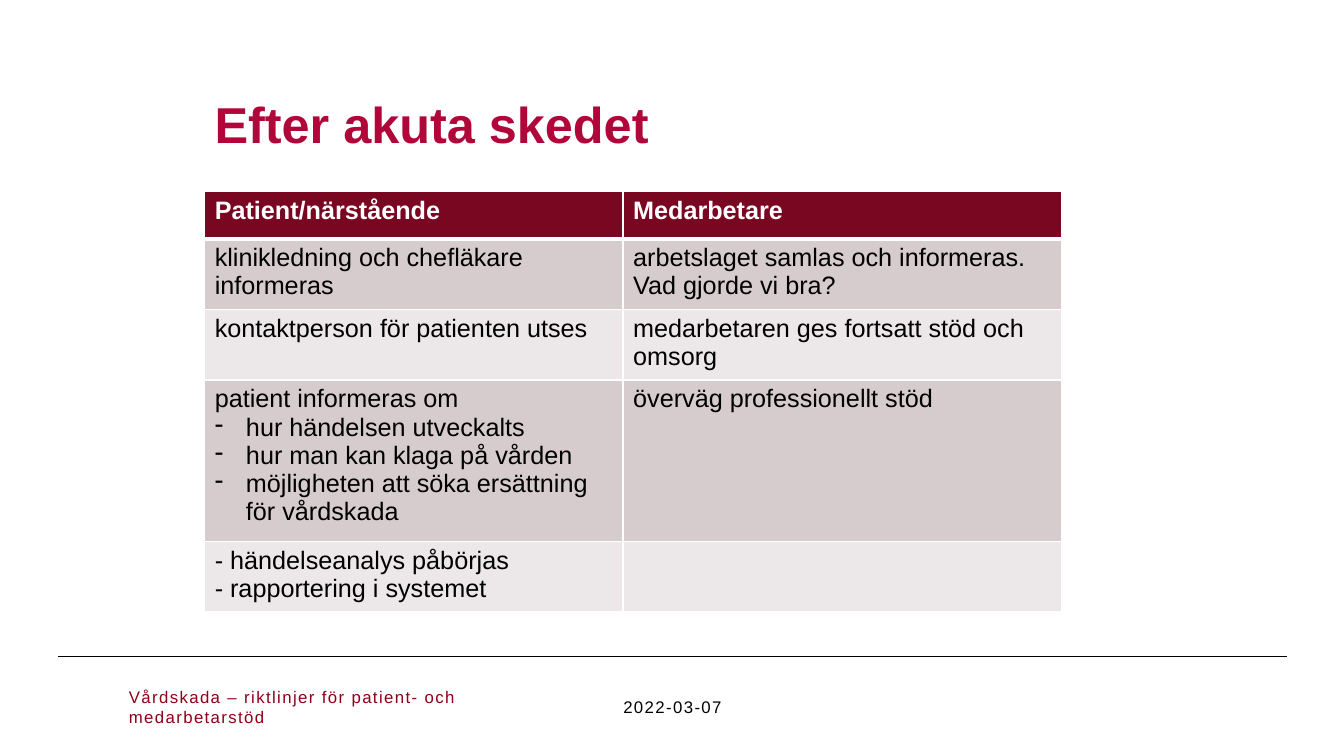
"""Build the slide about what happens after the acute phase."""
import pptx
import pptx.dml.color
import pptx.enum.shapes
import pptx.enum.text
import pptx.oxml
import pptx.oxml.ns
import pptx.util

PX = 9144
ANCHOR = pptx.enum.text.MSO_ANCHOR
ALIGN = pptx.enum.text.PP_ALIGN
NS = pptx.oxml.ns.nsdecls("a")


def rgb(value):
    return pptx.dml.color.RGBColor.from_string(value)


def write(frame, text, size=18, color="000000", bold=False, spacing=0,
          align=ALIGN.LEFT, anchor=ANCHOR.TOP):
    frame.word_wrap = True
    frame.vertical_anchor = anchor
    for index, line in enumerate(text.split("\n")):
        paragraph = frame.add_paragraph() if index else frame.paragraphs[0]
        paragraph.alignment = align
        if line.startswith("•"):
            line = line[1:]
            properties = paragraph._p.get_or_add_pPr()
            properties.set("marL", str(31 * PX))
            properties.set("indent", str(-31 * PX))
            properties.append(pptx.oxml.parse_xml(f'<a:buChar {NS} char="-"/>'))
        run = paragraph.add_run()
        run.text = line
        run.font.name = "Arial"
        run.font.size = pptx.util.Pt(size)
        run.font.bold = bold
        run.font.color.rgb = rgb(color)
        if spacing:
            run._r.get_or_add_rPr().set("spc", str(spacing * 100))


presentation = pptx.Presentation()
presentation.slide_width = 1333 * PX
presentation.slide_height = 750 * PX
slide = presentation.slides.add_slide(presentation.slide_layouts[6])

footer_rule = slide.shapes.add_connector(
    pptx.enum.shapes.MSO_CONNECTOR.STRAIGHT, 58 * PX, 651 * PX, 1276 * PX, 651 * PX)
footer_rule.line.color.rgb = rgb("000000")
footer_rule.line.width = pptx.util.Pt(0.5)
footer_rule._element.spPr.append(pptx.oxml.parse_xml(f"<a:effectLst {NS}/>"))

footer = dict(size=12, spacing=1, anchor=ANCHOR.MIDDLE)
for box, text, style in [
    ((203, 86, 795, 71), "Efter akuta skedet",
     dict(size=36, color="B1063A", bold=True, anchor=ANCHOR.BOTTOM)),
    ((531, 681, 272, 40), "2022-03-07", dict(footer, align=ALIGN.CENTER)),
    ((118, 681, 394, 40), "Vårdskada – riktlinjer för patient- och medarbetarstöd",
     dict(footer, color="8D0017")),
]:
    label = slide.shapes.add_textbox(*(length * PX for length in box))
    write(label.text_frame, text, **style)

steps = [
    ("Patient/närstående", "Medarbetare"),
    ("klinikledning och chefläkare informeras",
     "arbetslaget samlas och informeras. Vad gjorde vi bra?"),
    ("kontaktperson för patienten utses", "medarbetaren ges fortsatt stöd och omsorg"),
    ("patient informeras om\n•hur händelsen utveckalts\n•hur man kan klaga på vården\n"
     "•möjligheten att söka ersättning för vårdskada", "överväg professionellt stöd"),
    ("- händelseanalys påbörjas\n- rapportering i systemet", ""),
]
row_heights = [47, 66, 66, 150, 66]
column_widths = [415, 435]
table = slide.shapes.add_table(
    len(steps), 2, 203 * PX, 190 * PX, sum(column_widths) * PX, sum(row_heights) * PX).table
for column, width in zip(table.columns, column_widths):
    column.width = width * PX

for row_index, (row, height) in enumerate(zip(table.rows, row_heights)):
    row.height = height * PX
    header = row_index == 0
    fill = "790721" if header else ("ECE7E8", "D7CCCD")[row_index % 2]
    for cell, text in zip(row.cells, steps[row_index]):
        cell.margin_left = cell.margin_right = 10 * PX
        cell.margin_top = cell.margin_bottom = 5 * PX
        if text:
            write(cell.text_frame, text, color="FFFFFF" if header else "000000", bold=header)
        cell.fill.solid()
        cell.fill.fore_color.rgb = rgb(fill)
        for position, side in enumerate("LRTB"):
            thick = (header and side == "B") or (row_index == 1 and side == "T")
            border = pptx.oxml.parse_xml(
                f'<a:ln{side} {NS} w="{pptx.util.Pt(3 if thick else 1)}"><a:solidFill>'
                f'<a:srgbClr val="FFFFFF"/></a:solidFill></a:ln{side}>')
            cell._tc.get_or_add_tcPr().insert(position, border)

presentation.save("out.pptx")
